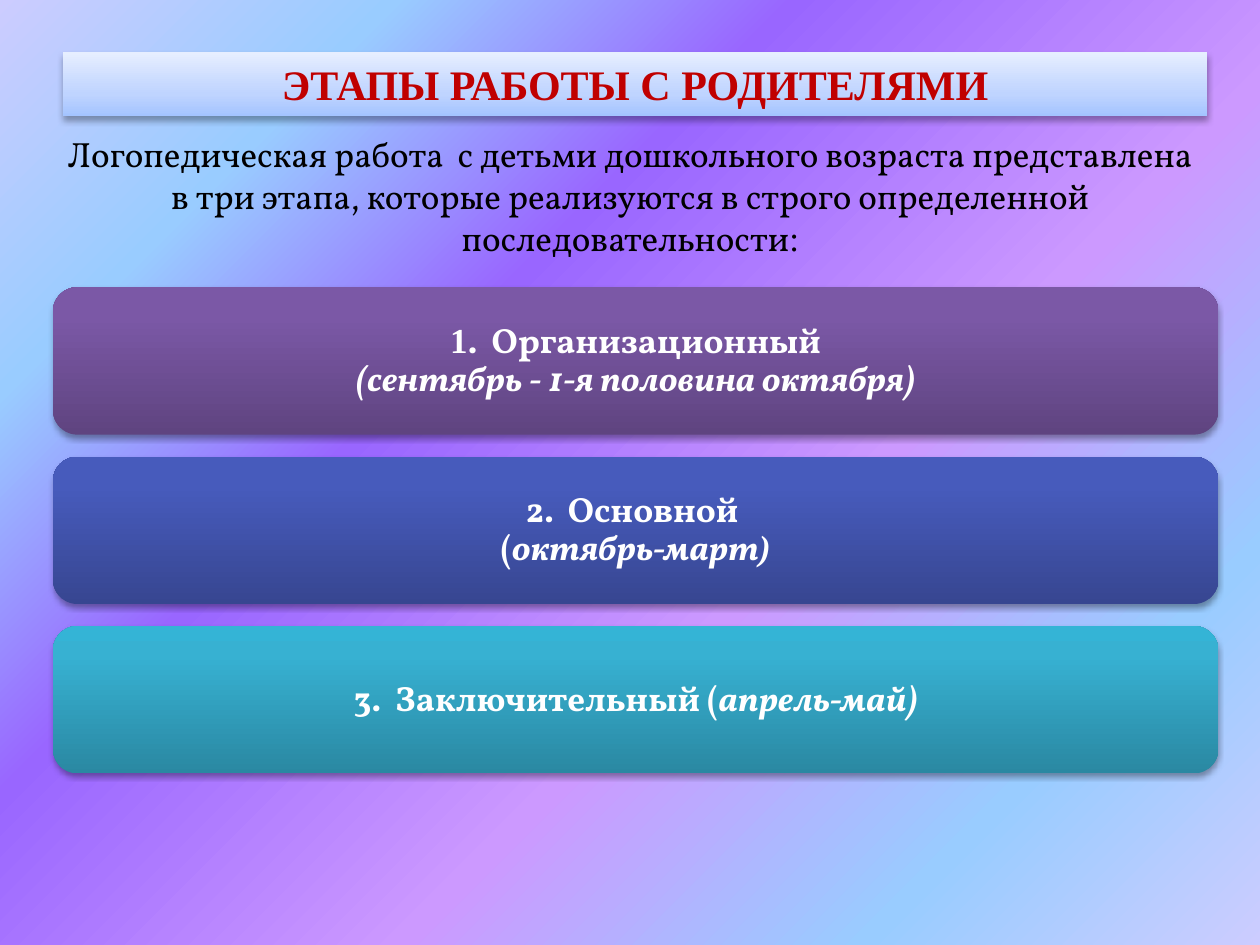
from dataclasses import dataclass

from lxml.etree import SubElement
from pptx import Presentation
from pptx.dml.color import RGBColor
from pptx.enum.shapes import MSO_SHAPE as Shape
from pptx.enum.text import MSO_ANCHOR as Anchor, PP_ALIGN as Align
from pptx.oxml.ns import qn
from pptx.util import Pt

SERIF, BODY = "Times New Roman", "Vollkorn"
LEFT, STAGE_TOP, STAGE_WIDTH, STAGE_HEIGHT, STAGE_STEP = 30.24, 164.16, 666, 84.24, 96.8
LINE_BREAK = "\n"


@dataclass(frozen=True)
class Run:
    text: str
    font: str = BODY
    italic: bool = False


@dataclass(frozen=True)
class Stage:
    colors: tuple[str, str, str]
    runs: tuple[Run, ...]


@dataclass(frozen=True)
class Shadow:
    opacity: int
    blur: float
    distance: float


STAGES = (
    Stage(("5F4480", "7B58A6", "7C57A8"), (
        Run("1", SERIF), Run(".  Организационный"), Run(LINE_BREAK),
        Run("(сентябрь - 1-я половина октября)", italic=True))),
    Stage(("374691", "475BBC", "455ABF"), (
        Run("2.  Основной "), Run(LINE_BREAK), Run("("),
        Run("октябрь-март", italic=True), Run(")", SERIF, True))),
    Stage(("2A88A2", "37B1D2", "34B4D6"), (
        Run("3.  Заключительный ("), Run("апрель-май)", italic=True))),
)


def hex_color(value: str) -> RGBColor:
    return RGBColor.from_string(value)


def set_gradient(owner, fill, stops, angle: float) -> None:
    """Fill with (percent, colour) stops; the angle runs counter-clockwise."""
    fill.gradient()
    fill.gradient_angle = angle
    stop_list = next(owner.element.iter(qn("a:gsLst")))
    stop_list[:] = []
    for percent, color in stops:
        stop = SubElement(stop_list, qn("a:gs"), pos=str(percent * 1000))
        SubElement(stop, qn("a:srgbClr"), val=color)


def set_shadow(shape, shadow: Shadow) -> None:
    shape.shadow.inherit = False
    effects = shape.element.spPr.find(qn("a:effectLst"))
    outer = SubElement(effects, qn("a:outerShdw"), blurRad=str(Pt(shadow.blur)),
                       dist=str(Pt(shadow.distance)), dir="5400000", rotWithShape="0")
    color = SubElement(outer, qn("a:srgbClr"), val="000000")
    SubElement(color, qn("a:alpha"), val=str(shadow.opacity * 1000))


def add_panel(slide, kind, box, stops, shadow: Shadow):
    shape = slide.shapes.add_shape(kind, *map(Pt, box))
    set_gradient(shape, shape.fill, stops, 90)
    shape.line.fill.background()
    set_shadow(shape, shadow)
    return shape


def write_text(shape, runs, size: float, color: str, bold: bool, **frame_format) -> None:
    frame = shape.text_frame
    for name, value in ({"word_wrap": True} | frame_format).items():
        setattr(frame, name, value)
    paragraph = frame.paragraphs[0]
    paragraph.alignment = Align.CENTER
    if frame_format["vertical_anchor"] == Anchor.MIDDLE:
        paragraph.line_spacing = 0.9
    for item in runs:
        if item.text == LINE_BREAK:
            paragraph.add_line_break()
            continue
        run = paragraph.add_run()
        run.text = item.text
        font_format = {"name": item.font, "size": Pt(size), "bold": bold, "italic": item.italic}
        for name, value in font_format.items():
            setattr(run.font, name, value)
        run.font.color.rgb = hex_color(color)


def add_stage(slide, index: int, stage: Stage) -> None:
    box = (LEFT, STAGE_TOP + index * STAGE_STEP, STAGE_WIDTH, STAGE_HEIGHT)
    shape = add_panel(slide, Shape.ROUNDED_RECTANGLE, box,
                      zip((0, 80, 100), stage.colors), Shadow(35, 3.1, 1.8))
    margins = {f"margin_{side}": Pt(6) for side in ("left", "top", "right", "bottom")}
    write_text(shape, stage.runs, 20, "FFFFFF", True,
               vertical_anchor=Anchor.MIDDLE, **margins)


def main() -> None:
    presentation = Presentation()
    presentation.slide_width, presentation.slide_height = Pt(720), Pt(540)
    slide = presentation.slides.add_slide(presentation.slide_layouts[6])

    # Background
    set_gradient(slide, slide.background.fill, (
        (0, "CCCCFF"), (18, "99CCFF"), (36, "9966FF"),
        (61, "CC99FF"), (82, "99CCFF"), (100, "CCCCFF")), 315)

    # Title band
    title = add_panel(slide, Shape.RECTANGLE, (36, 30, 653.76, 36.36),
                      ((0, "A4C4FF"), (35, "BFD4FF"), (100, "E6EEFF")), Shadow(32, 3.5, 2.2))
    write_text(title, [Run("ЭТАПЫ РАБОТЫ С РОДИТЕЛЯМИ", SERIF)], 24, "C00000", True,
               vertical_anchor=Anchor.TOP)

    # Introduction
    introduction = slide.shapes.add_textbox(*map(Pt, (LEFT, 72, 660, 80)))
    write_text(introduction, [
        Run("Логопедическая работа  с детьми дошкольного возраста представлена "
            "в три этапа, которые реализуются в строго определенной последовательности"),
        Run(":", SERIF)], 20, "000000", False, vertical_anchor=Anchor.TOP)

    # Stages
    for index, stage in enumerate(STAGES):
        add_stage(slide, index, stage)

    presentation.save("out.pptx")


if __name__ == "__main__":
    main()
